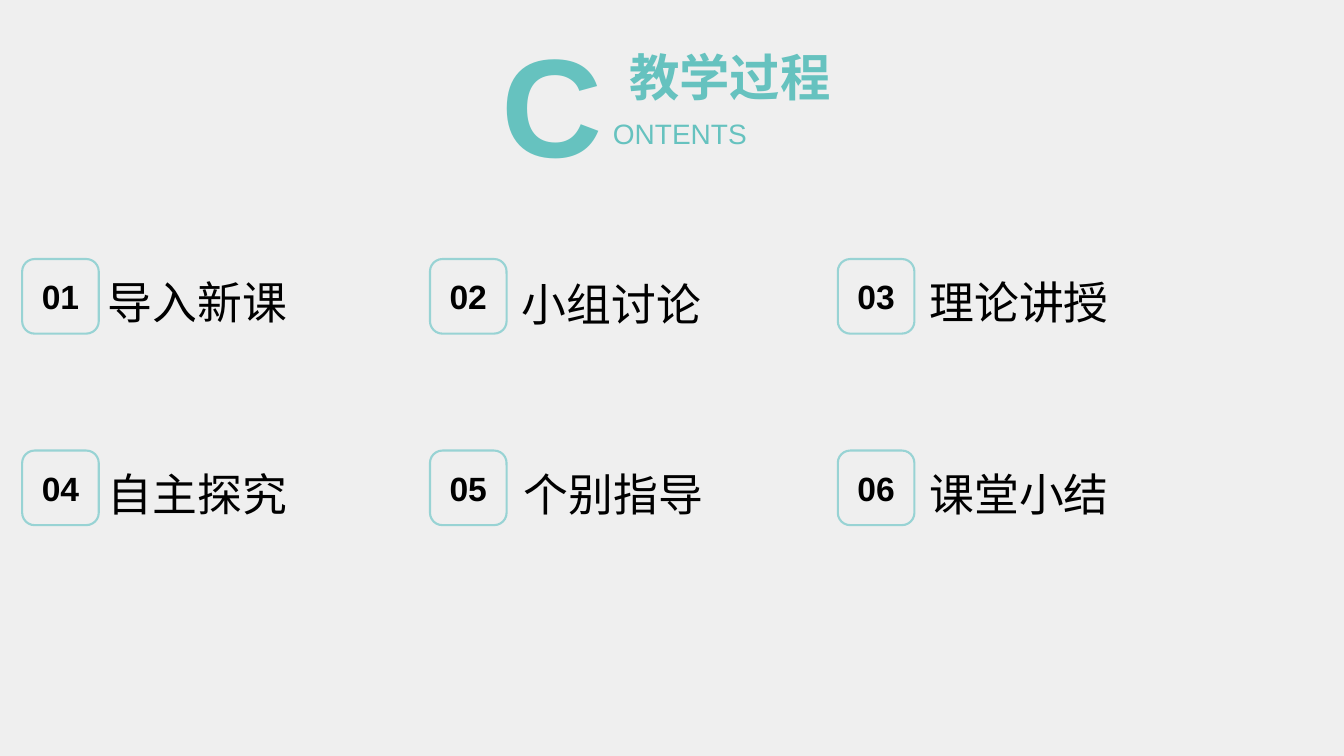
from lxml.etree import SubElement
from pptx import Presentation
from pptx.dml.color import RGBColor
from pptx.enum.shapes import MSO_SHAPE as SHAPE
from pptx.enum.text import MSO_ANCHOR as ANCHOR, PP_ALIGN as ALIGN
from pptx.oxml.ns import qn
from pptx.util import Inches, Pt

COLORS = {"background": "EFEFEF", "teal": "66C2BF", "border": "98D3D4", "text": "000000"}
LATIN, CJK = "Arial", "Noto Sans CJK SC"
WIDTH, HEIGHT = 13.33, 7.5
COLUMN, ROW = 4.045, 1.9
BADGE_W, BADGE_H = 0.76, 0.74
STEPS = [
    ("导入新课", 0.75, -0.04, CJK),
    ("小组讨论", 0.81, -0.02, LATIN),
    ("理论讲授", 0.81, -0.04, LATIN),
    ("自主探究", 0.75, -0.04, LATIN),
    ("个别指导", 0.83, -0.04, LATIN),
    ("课堂小结", 0.81, -0.04, LATIN),
]


def rgb(name):
    return RGBColor.from_string(COLORS[name])


def write(sp, text, size, color="text", bold=False, align=ALIGN.LEFT,
          anchor=ANCHOR.MIDDLE, font=LATIN):
    tf = sp.text_frame
    tf.word_wrap = True
    tf.vertical_anchor = anchor
    p = tf.paragraphs[0]
    p.text = text
    p.alignment = align
    p.font.name = font
    p.font.size = Pt(size)
    p.font.bold = bold
    p.font.color.rgb = rgb(color)
    props = p._p.pPr.find(qn("a:defRPr"))
    SubElement(props, qn("a:ea"), typeface=CJK)
    return tf


def add_text(s, x, y, w, h, text, size, **style):
    sp = s.shapes.add_textbox(Inches(x), Inches(y), Inches(w), Inches(h))
    return write(sp, text, size, **style)


def add_heading(s, x, y):
    add_text(s, x, y + 0.37, 2.52, 0.77, "教学过程", 36, color="teal",
             bold=True, align=ALIGN.CENTER, anchor=ANCHOR.BOTTOM)
    tf = add_text(s, x - 2.04, y, 2.04, 2.07, "C", 100, color="teal",
                  bold=True, align=ALIGN.RIGHT)
    tf.margin_left = tf.margin_right = tf.margin_top = tf.margin_bottom = 0
    add_text(s, x, y + 1.14, 1.75, 0.44, "ONTENTS", 20, color="teal",
             align=ALIGN.JUSTIFY, anchor=ANCHOR.TOP)


def add_step(s, x, y, number, label, dx, dy, font):
    badge = s.shapes.add_shape(SHAPE.ROUNDED_RECTANGLE, Inches(x), Inches(y),
                               Inches(BADGE_W), Inches(BADGE_H))
    badge.shadow.inherit = False
    badge.fill.background()
    badge.line.color.rgb = rgb("border")
    badge.line.width = Pt(1.5)
    write(badge, f"{number:02d}", 24, bold=True, align=ALIGN.CENTER)
    add_text(s, x + dx, y + dy, 3.16, 0.78, label, 32,
             anchor=ANCHOR.BOTTOM, font=font)


def add_steps(s, x, y, columns=3):
    for i, step in enumerate(STEPS):
        row, column = divmod(i, columns)
        add_step(s, x + column * COLUMN, y + row * ROW, i + 1, *step)


def main():
    prs = Presentation()
    prs.slide_width, prs.slide_height = Inches(WIDTH), Inches(HEIGHT)
    s = prs.slides.add_slide(prs.slide_layouts[6])
    s.background.fill.solid()
    s.background.fill.fore_color.rgb = rgb("background")
    add_heading(s, 5.98, -0.03)
    add_steps(s, 0.22, 2.57)
    prs.save("out.pptx")


if __name__ == "__main__":
    main()
